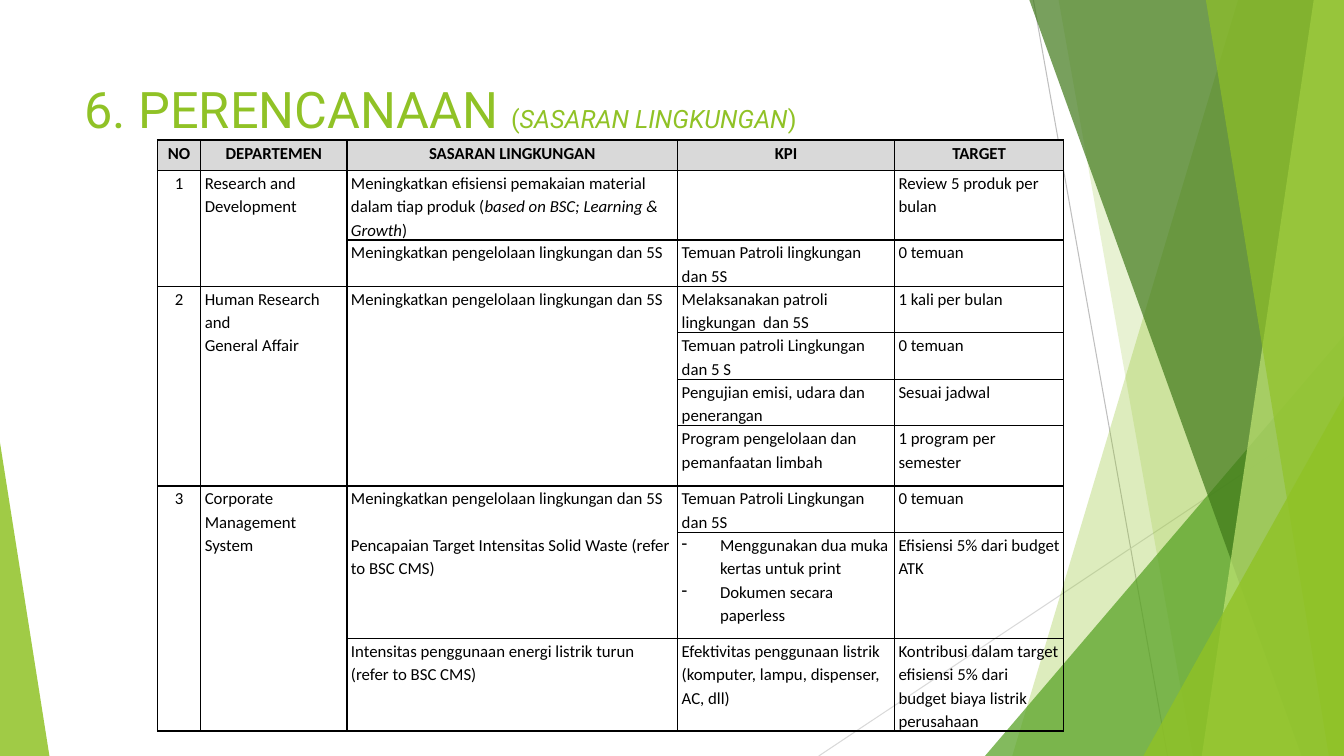
from lxml import etree
from pptx import Presentation
from pptx.dml.color import RGBColor
from pptx.enum.shapes import MSO_CONNECTOR, MSO_SHAPE
from pptx.enum.text import MSO_ANCHOR, PP_ALIGN
from pptx.oxml.ns import qn
from pptx.util import Inches, Pt

TRIANGLE = MSO_SHAPE.ISOSCELES_TRIANGLE
STRAIGHT = MSO_CONNECTOR.STRAIGHT
MIDDLE = MSO_ANCHOR.MIDDLE
CENTER, LEFT = PP_ALIGN.CENTER, PP_ALIGN.LEFT

WIDTH, HEIGHT = Inches(13.33), Inches(7.5)
GREEN, BLACK, GREY = "90C226", "000000", "D9D9D9"

LINES = [(76.89, 0, 86.87, 100, "BFBFBF"), (100, 53.73, 60.92, 100, GREY)]
BACK_BANDS = [(92.12, 75.32, GREEN, 30), (78.77, 88.75, GREEN, 20)]
FRONT_BANDS = [
    (76.59, 96.85, "3F7819", 70),
    (97.75, 89.42, "C0E474", 70),
    (89.72, 98.87, GREEN, 65),
]

COLUMNS = [2.18, 3.23, 10.88, 24.61, 16.13, 12.6]
ROWS = [4, 8, 4, 6, 6, 6, 8, 6, 14, 12]
EVERY_ROW = set(range(len(ROWS) + 1))
DEPARTMENT_RULES = {0, 1, 3, 7, 10}
RULES = [set(), DEPARTMENT_RULES, DEPARTMENT_RULES, {0, 1, 2, 3, 7, 9, 10}, EVERY_ROW, EVERY_ROW]
GOALS = [
    ["NO", "DEPARTEMEN", "SASARAN LINGKUNGAN", "KPI", "TARGET"],
    ["1", "Research and Development",
     "Meningkatkan efisiensi pemakaian material dalam tiap produk (*based on BSC; Learning & Growth*)",
     "", "Review 5 produk per bulan"],
    ["", "", "Meningkatkan pengelolaan lingkungan dan 5S",
     "Temuan Patroli lingkungan dan 5S", "0 temuan"],
    ["2", "Human Research and", "Meningkatkan pengelolaan lingkungan dan 5S",
     "Melaksanakan patroli lingkungan  dan 5S", "1 kali per bulan"],
    ["", "General Affair", "", "Temuan patroli Lingkungan dan 5 S", "0 temuan"],
    ["", "", "", "Pengujian emisi, udara dan penerangan", "Sesuai jadwal"],
    ["", "", "", "Program pengelolaan dan pemanfaatan limbah", "1 program per semester"],
    ["3", "Corporate Management", "Meningkatkan pengelolaan lingkungan dan 5S",
     "Temuan Patroli Lingkungan dan 5S", "0 temuan"],
    ["", "System", "Pencapaian Target Intensitas Solid Waste (refer to BSC CMS)",
     "- Menggunakan dua muka kertas untuk print\n- Dokumen secara paperless",
     "Efisiensi 5% dari budget ATK"],
    ["", "", "Intensitas penggunaan energi listrik turun (refer to BSC CMS)",
     "Efektivitas penggunaan listrik (komputer, lampu, dispenser, AC, dll)",
     "Kontribusi dalam target efisiensi 5% dari budget biaya listrik perusahaan"],
]


def color(value):
    return RGBColor.from_string(value)


def x(percent):
    return round(WIDTH * percent / 100)


def y(percent):
    return round(HEIGHT * percent / 100)


def add_text(p, text, size=12, font="Calibri", ink=BLACK, bold=False):
    for i, part in enumerate(text.split("*")):
        if part:
            r = p.add_run()
            r.text = part
            r.font.size, r.font.name = Pt(size), font
            r.font.bold, r.font.italic = bold, i % 2 == 1
            r.font.color.rgb = color(ink)


def paint(sp, fill, opacity):
    sp.shadow.inherit = False
    sp.fill.solid()
    sp.fill.fore_color.rgb = color(fill)
    sp.line.fill.background()
    tint = sp.fill._xPr.find(qn("a:solidFill"))[0]
    etree.SubElement(tint, qn("a:alpha"), val=str(opacity * 1000))


def add_line(s, x1, y1, x2, y2, ink):
    line = s.shapes.add_connector(STRAIGHT, x(x1), y(y1), x(x2), y(y2))
    line.line.color.rgb = color(ink)
    line.line.width = Pt(0.75)
    etree.SubElement(line._element.spPr, qn("a:effectLst"))


def add_band(s, top, bottom, fill, opacity):
    outline = s.shapes.build_freeform(x(top), 0)
    outline.add_line_segments([(WIDTH, 0), (WIDTH, HEIGHT), (x(bottom), HEIGHT)])
    paint(outline.convert_to_shape(), fill, opacity)


def add_triangle(s, left, top, width, peak, fill, opacity):
    sp = s.shapes.add_shape(TRIANGLE, x(left), y(top), x(width), y(100 - top))
    sp.adjustments[0] = peak
    paint(sp, fill, opacity)


def add_title(s):
    tf = s.shapes.add_textbox(x(5.55), y(8.93), x(70.52), y(10.67)).text_frame
    tf.word_wrap = True
    tf.vertical_anchor = MIDDLE
    p = tf.paragraphs[0]
    add_text(p, "6. PERENCANAAN ", size=36, font="Roboto", ink=GREEN)
    add_text(p, "(*SASARAN LINGKUNGAN*)", size=18, font="Roboto", ink=GREEN)


def add_borders(cell, sides):
    tcPr = cell._tc.get_or_add_tcPr()
    for side, visible in sides.items():
        ln = etree.SubElement(tcPr, qn("a:ln" + side), w=str(Pt(1)))
        if visible:
            fill = etree.SubElement(ln, qn("a:solidFill"))
            etree.SubElement(fill, qn("a:srgbClr"), val=BLACK)
        else:
            etree.SubElement(ln, qn("a:noFill"))


def add_bullet(p):
    pPr = p._p.get_or_add_pPr()
    pPr.set("marL", str(Inches(0.38)))
    pPr.set("indent", str(-Inches(0.38)))
    etree.SubElement(pPr, qn("a:buChar"), char="-")


def fill_cell(cell, text, header=False, align=LEFT):
    cell.margin_left = cell.margin_right = Inches(0.04)
    cell.margin_top = cell.margin_bottom = 0
    if header:
        cell.fill.solid()
        cell.fill.fore_color.rgb = color(GREY)
    else:
        cell.fill.background()
    tf = cell.text_frame
    for i, line in enumerate(text.split("\n")):
        p = tf.add_paragraph() if i else tf.paragraphs[0]
        if line.startswith("- "):
            add_bullet(p)
        p.alignment = align
        p.line_spacing = 1.15
        add_text(p, line.removeprefix("- "), bold=header)
    p.space_after = Pt(8)


def add_goals(s):
    table = s.shapes.add_table(len(ROWS), len(COLUMNS), x(9.53), y(18.53),
                               x(sum(COLUMNS)), y(sum(ROWS))).table
    table.first_row = table.horz_banding = False
    for column, width in zip(table.columns, COLUMNS):
        column.width = x(width)
    for row, height in zip(table.rows, ROWS):
        row.height = y(height)
    for i, goal in enumerate(GOALS):
        for j, text in enumerate(["", *goal]):
            cell = table.cell(i, j)
            add_borders(cell, {"L": j > 0, "R": True, "T": i in RULES[j], "B": i + 1 in RULES[j]})
            header = i == 0 and j > 0
            fill_cell(cell, text, header, CENTER if header or j == 1 else LEFT)


def main():
    prs = Presentation()
    prs.slide_width, prs.slide_height = WIDTH, HEIGHT
    s = prs.slides.add_slide(prs.slide_layouts[6])
    for line in LINES:
        add_line(s, *line)
    for band in BACK_BANDS:
        add_band(s, *band)
    add_triangle(s, 73.29, 44.4, 26.71, 1, "54A021", 72)
    for band in FRONT_BANDS:
        add_band(s, *band)
    add_triangle(s, 85.07, 52.4, 14.93, 1, GREEN, 80)
    add_triangle(s, 0, 58.53, 3.68, 0, GREEN, 85)
    add_title(s)
    add_goals(s)
    prs.save("out.pptx")


if __name__ == "__main__":
    main()
